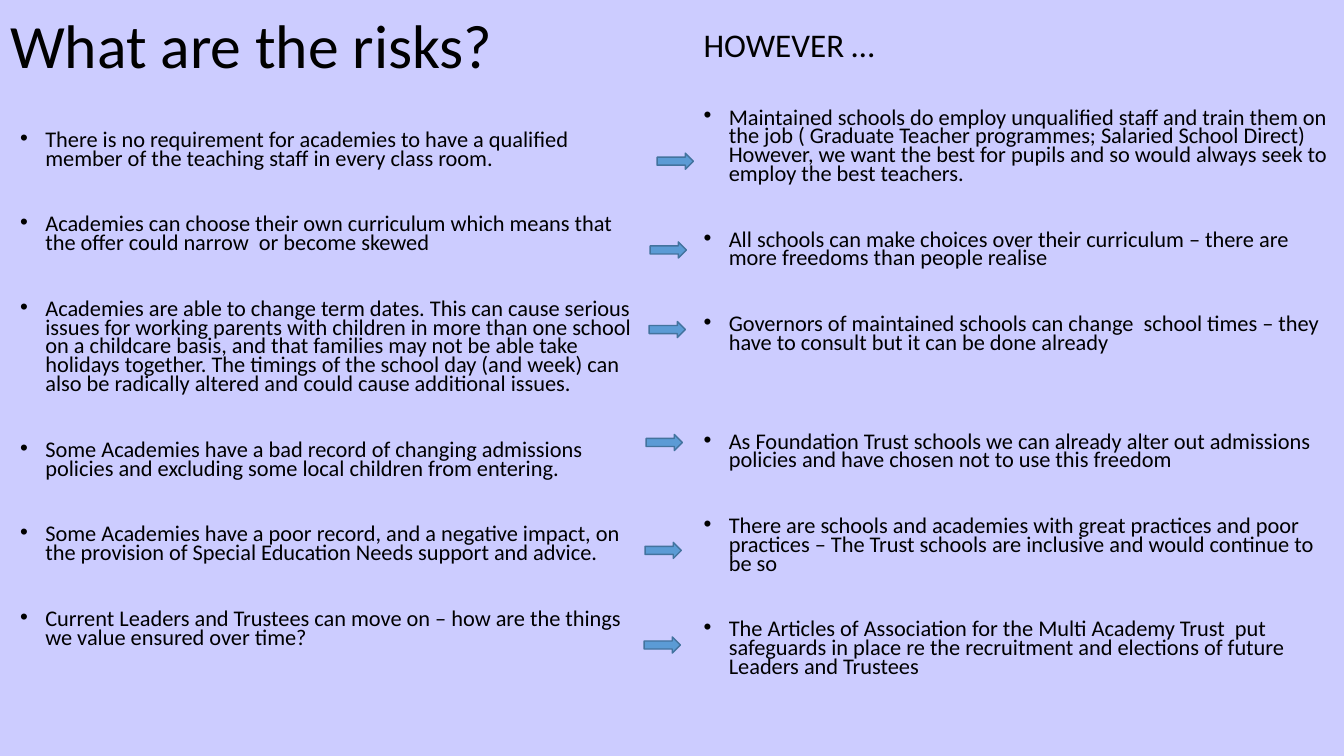
from pptx import Presentation
from pptx.dml.color import RGBColor
from pptx.enum.shapes import MSO_SHAPE
from pptx.enum.text import MSO_ANCHOR, MSO_AUTO_SIZE, PP_ALIGN
from pptx.oxml.xmlchemy import OxmlElement
from pptx.util import Pt

COLORS = {"background": "CCCCFF", "text": "000000", "arrow": "5B9BD5", "arrow_line": "43739E"}
FONT = "Calibri"
INDENT = 18
GAP = 33.5
WIDE_GAP = 57

# Boxes are (left, top, width, height)
TITLE_BOX = (0, -17.3, 828, 104.4)
RISKS_BOX = (7.2, 71.3, 462.2, 478.8)
ANSWERS_BOX = (495.4, 21.6, 460.8, 465.8)
ARROW_SIZE = (25.9, 11.5)
ARROW_CORNERS = [(469.4, 109.4), (464.4, 172.8), (463.7, 229.7),
                 (461.5, 310.3), (460.8, 387.4), (460.1, 455)]

RISKS = [
    "There is no requirement for academies to have a qualified member of the teaching staff in every class room.",
    "Academies can choose their own curriculum which means that the offer could narrow  or become skewed",
    "Academies are able to change term dates. This can cause serious issues for working parents with children "
    "in more than one school on a childcare basis, and that families may not be able take holidays together. "
    "The timings of the school day (and week) can also be radically altered and could cause additional issues.",
    "Some Academies have a bad record of changing admissions policies and excluding some local children from entering.",
    "Some Academies have a poor record, and a negative impact, on the provision of Special Education Needs "
    "support and advice.",
    "Current Leaders and Trustees can move on – how are the things we value ensured over time?",
]
ANSWERS = [
    "Maintained schools do employ unqualified staff and train them on the job ( Graduate Teacher programmes; "
    "Salaried School Direct) However, we want the best for pupils and so would always seek to employ the best teachers.",
    "All schools can make choices over their curriculum – there are more freedoms than people realise",
    "Governors of maintained schools can change  school times – they have to consult but it can be done already",
    "As Foundation Trust schools we can already alter out admissions policies and have chosen not to use this freedom",
    "There are schools and academies with great practices and poor practices – The Trust schools are inclusive "
    "and would continue to be so",
    "The Articles of Association for the Multi Academy Trust  put safeguards in place re the recruitment and "
    "elections of future Leaders and Trustees",
]
ANSWER_GAPS = [GAP, GAP, GAP, WIDE_GAP, GAP, GAP]


def color(name):
    return RGBColor.from_string(COLORS[name])


def place(placeholder, box):
    """Move a placeholder to its box and return its text frame."""
    placeholder.left, placeholder.top, placeholder.width, placeholder.height = map(Pt, box)
    frame = placeholder.text_frame
    frame.word_wrap = True
    frame.auto_size = MSO_AUTO_SIZE.NONE
    return frame


def style(paragraph, size, line_spacing, space_before=0):
    paragraph.alignment = PP_ALIGN.LEFT
    paragraph.line_spacing = line_spacing
    paragraph.space_before = Pt(space_before)
    paragraph.font.size = Pt(size)
    paragraph.font.name = FONT
    paragraph.font.color.rgb = color("text")


def set_bullet(paragraph, char=None):
    properties = paragraph._p.get_or_add_pPr()
    indent = Pt(INDENT) if char else 0
    properties.set("marL", str(indent))
    properties.set("indent", str(-indent))
    bullet = OxmlElement("a:buChar" if char else "a:buNone")
    if char:
        bullet.set("char", char)
    properties.insert_element_before(bullet, "a:tabLst", "a:defRPr", "a:extLst")


def add_title(slide, box):
    frame = place(slide.shapes.title, box)
    frame.vertical_anchor = MSO_ANCHOR.MIDDLE
    frame.text = "What are the risks?"
    style(frame.paragraphs[0], 44, 0.9)


def fill_bullets(paragraphs, items, gaps):
    for paragraph, item, gap in zip(paragraphs, items, gaps):
        paragraph.text = item
        style(paragraph, 16, 0.7, gap)
        set_bullet(paragraph, "•")


def add_risks(slide, box):
    frame = place(slide.placeholders[1], box)
    frame.vertical_anchor = MSO_ANCHOR.TOP
    frame.margin_top = Pt(23.2)
    frame.text = "\n".join(RISKS)
    fill_bullets(frame.paragraphs, RISKS, [0] + [GAP] * (len(RISKS) - 1))


def add_answers(slide, box):
    frame = place(slide.placeholders[2], box)
    frame.vertical_anchor = MSO_ANCHOR.TOP
    frame.text = "\n".join(["HOWEVER …"] + ANSWERS)
    heading, *answers = frame.paragraphs
    style(heading, 23.6, 0.7)
    set_bullet(heading)
    fill_bullets(answers, ANSWERS, ANSWER_GAPS)


def add_arrow(slide, box):
    arrow = slide.shapes.add_shape(MSO_SHAPE.RIGHT_ARROW, *map(Pt, box))
    arrow.shadow.inherit = False
    arrow.fill.solid()
    arrow.fill.fore_color.rgb = color("arrow")
    arrow.line.color.rgb = color("arrow_line")
    arrow.line.width = Pt(1)


def main():
    presentation = Presentation()
    presentation.slide_width = Pt(960)
    presentation.slide_height = Pt(540)
    slide = presentation.slides.add_slide(presentation.slide_layouts.get_by_name("Two Content"))
    slide.background.fill.solid()
    slide.background.fill.fore_color.rgb = color("background")
    add_title(slide, TITLE_BOX)
    add_risks(slide, RISKS_BOX)
    add_answers(slide, ANSWERS_BOX)
    for corner in ARROW_CORNERS:
        add_arrow(slide, corner + ARROW_SIZE)
    presentation.save("out.pptx")


if __name__ == "__main__":
    main()
